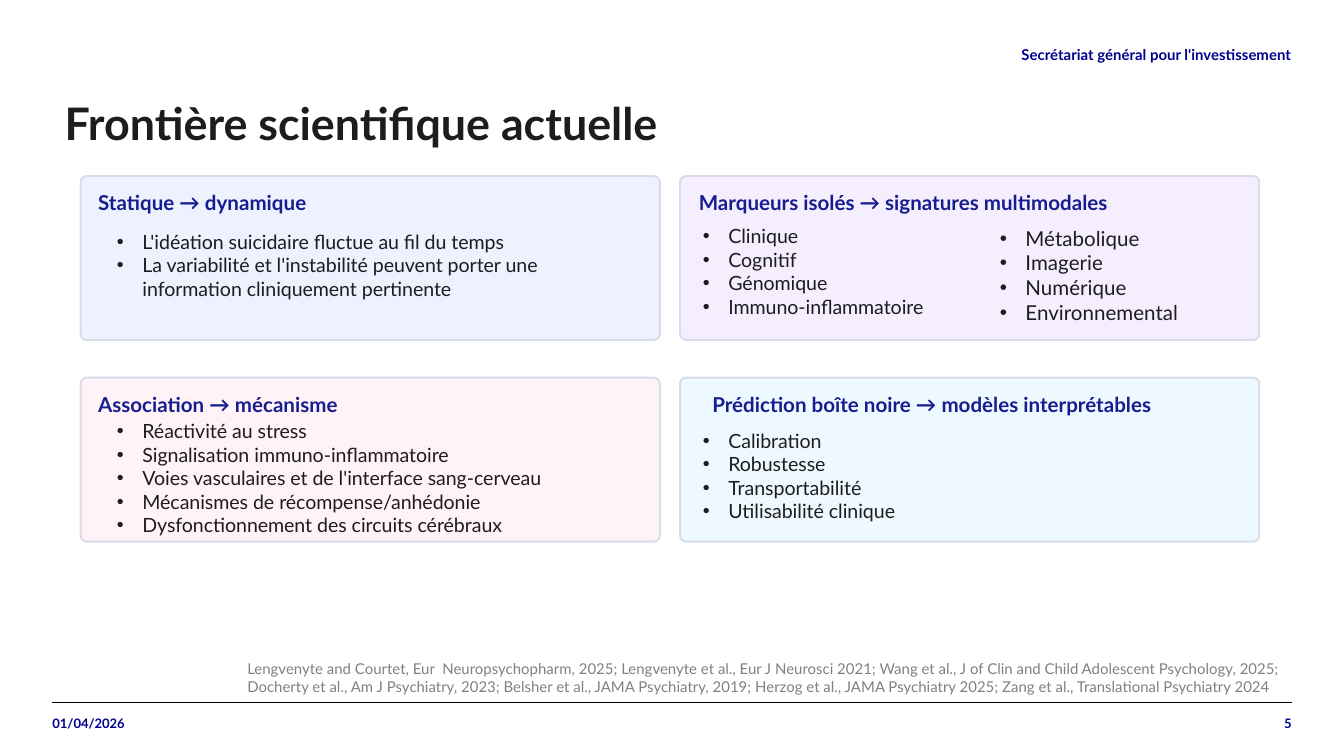
import pptx
import pptx.util
import pptx.dml.color
import pptx.enum.shapes
import pptx.enum.text
import pptx.oxml.ns
from lxml import etree

Inches = pptx.util.Inches
Pt = pptx.util.Pt
RGBColor = pptx.dml.color.RGBColor
Anchor = pptx.enum.text.MSO_ANCHOR
Align = pptx.enum.text.PP_ALIGN
qn = pptx.oxml.ns.qn

FONT = "Lato"
WHITE = RGBColor(0xFF, 0xFF, 0xFF)
BLACK = RGBColor(0x00, 0x00, 0x00)
INK = RGBColor(0x1D, 0x1D, 0x1F)
NAVY = RGBColor(0x00, 0x00, 0x91)
HEADING = RGBColor(0x16, 0x1D, 0x8F)
GREY = RGBColor(0x80, 0x80, 0x80)
BORDER = RGBColor(0xD8, 0xDC, 0xE8)
BLUE = RGBColor(0xEE, 0xF2, 0xFF)
VIOLET = RGBColor(0xF4, 0xEE, 0xFF)
PINK = RGBColor(0xFF, 0xF3, 0xF7)
CYAN = RGBColor(0xEE, 0xF8, 0xFF)

PANEL_WIDTH, PANEL_HEIGHT = 4.31, 1.22
PANEL_LEFT, PANEL_TOP = 0.6, 1.31
COLUMN_STEP, ROW_STEP = 4.46, 1.5

PANELS = [
    ("Statique → dynamique", 0.13, BLUE, [
        (0.27, 0.4, 3.77, 10.5, [
            "L'idéation suicidaire fluctue au fil du temps",
            "La variabilité et l'instabilité peuvent porter une information cliniquement pertinente",
        ]),
    ]),
    ("Marqueurs isolés → signatures multimodales", 0.14, VIOLET, [
        (0.17, 0.36, 2.1, 10.5, ["Clinique", "Cognitif", "Génomique", "Immuno-inflammatoire"]),
        (2.38, 0.37, 1.9, 11, ["Métabolique", "Imagerie", "Numérique", "Environnemental"]),
    ]),
    ("Association → mécanisme", 0.13, PINK, [
        (0.27, 0.31, 3.77, 10.5, [
            "Réactivité au stress",
            "Signalisation immuno-inflammatoire",
            "Voies vasculaires et de l'interface sang-cerveau",
            "Mécanismes de récompense/anhédonie",
            "Dysfonctionnement des circuits cérébraux",
        ]),
    ]),
    ("Prédiction boîte noire → modèles interprétables", 0.24, CYAN, [
        (0.17, 0.38, 3.77, 10.5,
         ["Calibration", "Robustesse", "Transportabilité", "Utilisabilité clinique"]),
    ]),
]

REFERENCES = (
    "Lengvenyte and Courtet, Eur  Neuropsychopharm, 2025; Lengvenyte et al., Eur J Neurosci 2021; "
    "Wang et al., J of Clin and Child Adolescent Psychology, 2025; "
    "Docherty et al., Am J Psychiatry, 2023; Belsher et al., JAMA Psychiatry, 2019; "
    "Herzog et al., JAMA Psychiatry 2025; Zang et al., Translational Psychiatry 2024"
)


def add_text(page, left, top, width, height, lines, size, color, bold=False,
             align=Align.LEFT, anchor=Anchor.TOP, bullets=False):
    box = page.shapes.add_textbox(Inches(left), Inches(top), Inches(width), Inches(height))
    frame = box.text_frame
    frame.word_wrap = True
    frame.vertical_anchor = anchor
    frame.margin_left = frame.margin_right = frame.margin_top = frame.margin_bottom = 0
    frame.text = "\n".join(lines)
    for para in frame.paragraphs:
        para.alignment = align
        if bullets:
            add_bullet(para)
        for span in para.runs:
            span.font.name = FONT
            span.font.size = Pt(size)
            span.font.bold = bold
            span.font.color.rgb = color
    return box


def add_bullet(para):
    properties = para._p.get_or_add_pPr()
    properties.set("marL", str(Inches(0.19)))
    properties.set("indent", str(Inches(-0.19)))
    etree.SubElement(properties, qn("a:buFont")).set("typeface", "Arial")
    etree.SubElement(properties, qn("a:buChar")).set("char", "•")


def add_header(page, left, top, width):
    add_text(page, left + 1.48, top, width - 1.48, 0.39,
             ["Secrétariat général pour l'investissement"], 8, NAVY, True,
             Align.RIGHT, Anchor.MIDDLE)
    title = add_text(page, left + 0.09, top + 0.55, width - 0.01, 0.59,
                     ["Frontière scientifique actuelle"], 24, INK, True)
    title.text_frame.paragraphs[0].line_spacing = 0.9


def add_panel(page, left, top, heading, indent, fill, lists):
    panel = page.shapes.add_shape(
        pptx.enum.shapes.MSO_SHAPE.ROUNDED_RECTANGLE,
        Inches(left), Inches(top), Inches(PANEL_WIDTH), Inches(PANEL_HEIGHT))
    panel.adjustments[0] = 0.037
    panel.shadow.inherit = False
    panel.fill.solid()
    panel.fill.fore_color.rgb = fill
    panel.line.color.rgb = BORDER
    panel.line.width = Pt(1)
    add_text(page, left + indent, top + 0.11, 3.83, 0.17, [heading], 11, HEADING, True,
             anchor=Anchor.MIDDLE)
    for x, y, width, size, items in lists:
        add_text(page, left + x, top + y, width, len(items) * size / 60, items, size, INK,
                 bullets=True)


def add_footer(page, left, top, width):
    add_text(page, left + 1.45, top - 0.32, width - 1.43, 0.27, [REFERENCES], 8, GREY)
    rule = page.shapes.add_connector(
        pptx.enum.shapes.MSO_CONNECTOR.STRAIGHT,
        Inches(left), Inches(top), Inches(left + width), Inches(top))
    rule.line.color.rgb = BLACK
    rule.line.width = Pt(0.5)
    etree.SubElement(rule._element.spPr, qn("a:effectLst"))
    add_text(page, left, top, 1.34, 0.3, ["01/04/2026"], 7, NAVY, True, anchor=Anchor.MIDDLE)
    add_text(page, left + width - 0.51, top, 0.51, 0.3, ["5"], 7, NAVY, True,
             Align.RIGHT, Anchor.MIDDLE)


def main():
    deck = pptx.Presentation()
    deck.slide_width = Inches(10)
    deck.slide_height = deck.slide_width * 9 // 16
    page = deck.slides.add_slide(deck.slide_layouts[6])
    page.background.fill.solid()
    page.background.fill.fore_color.rgb = WHITE
    add_header(page, 0.39, 0.21, 9.22)
    for index, panel in enumerate(PANELS):
        row, column = divmod(index, 2)
        add_panel(page, PANEL_LEFT + column * COLUMN_STEP, PANEL_TOP + row * ROW_STEP, *panel)
    add_footer(page, 0.39, 5.23, 9.22)
    deck.save("out.pptx")


if __name__ == "__main__":
    main()
